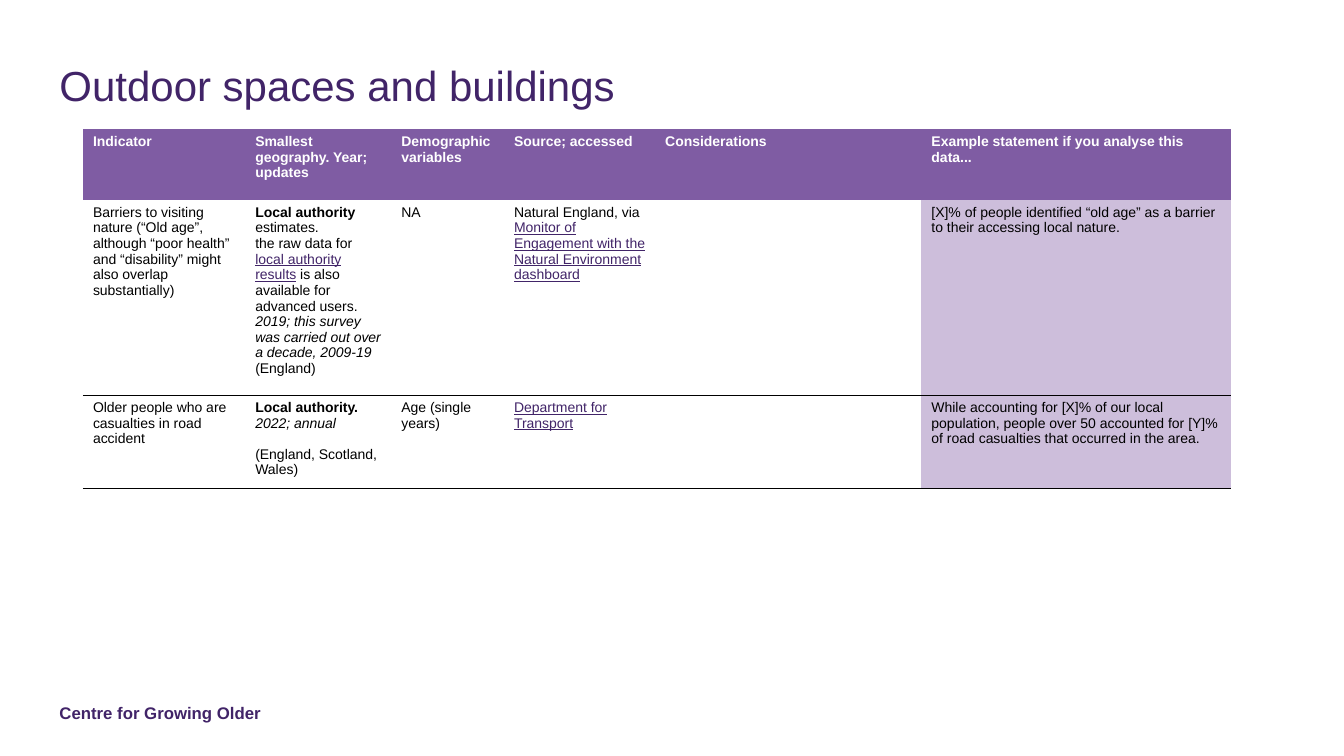
from lxml import etree
from pptx import Presentation
from pptx.dml.color import RGBColor
from pptx.enum.text import MSO_ANCHOR, PP_ALIGN
from pptx.oxml.ns import qn
from pptx.util import Cm, Pt

LEFT, TOP = PP_ALIGN.LEFT, MSO_ANCHOR.TOP
FONT = "Arial"
NO_GRID_STYLE = "{2D5ABB26-0587-4C30-8999-92F81FD0307C}"
COLOURS = {
    "brand": "412468",
    "header": "7F5CA3",
    "example": "CDBEDB",
    "white": "FFFFFF",
    "black": "000000",
}

TITLE = "Outdoor spaces and buildings"
FOOTER = "Centre for Growing Older"
HEADINGS = [
    "Indicator",
    "Smallest geography. Year; updates",
    "Demographic variables",
    "Source; accessed",
    "Considerations",
    "Example statement if you analyse this data...",
]
INDICATORS = [
    [
        [[("Barriers to visiting nature (“Old age”, although “poor health” and "
           "“disability” might also overlap substantially)", "plain")]],
        [
            [("Local authority", "bold"), (" estimates.", "plain")],
            [("the raw data for ", "plain"),
             ("local authority results", "link"),
             (" is also available for advanced users. ", "plain"),
             ("2019; this survey was carried out over a decade, 2009-19", "italic")],
            [("(England)", "plain")],
        ],
        [[("NA", "plain")]],
        [[("Natural England, via ", "plain"),
          ("Monitor of Engagement with the Natural Environment dashboard", "link")]],
        [],
        [[("[X]% of people identified “old age” as a barrier to their accessing "
           "local nature.", "plain")]],
    ],
    [
        [[("Older people who are casualties in road accident", "plain")]],
        [
            [("Local authority. ", "bold"), ("2022; annual", "italic")],
            [("(England, Scotland, Wales)", "spaced")],
        ],
        [[("Age (single years)", "plain")]],
        [[("Department for Transport", "link")]],
        [],
        [[("While accounting for [X]% of our local population, people over 50 "
           "accounted for [Y]% of road casualties that occurred in the area.", "plain")]],
    ],
]
COLUMN_WIDTHS = [4.09, 3.68, 2.84, 3.81, 6.71, 7.79]
ROW_HEIGHTS = [1.78, 4.6, 2.25]
EXAMPLE_COLUMN = len(HEADINGS) - 1


def add_run(paragraph, words, size, colour, bold=False, italic=False, underline=False):
    run = paragraph.add_run()
    run.text = words
    font = run.font
    font.name, font.size = FONT, Pt(size)
    font.bold, font.italic, font.underline = bold, italic, underline
    font.color.rgb = RGBColor.from_string(COLOURS[colour])


def add_label(slide, words, left, top, width, height, size, bold=False):
    frame = slide.shapes.add_textbox(Cm(left), Cm(top), Cm(width), Cm(height)).text_frame
    frame.word_wrap = True
    frame.vertical_anchor = TOP
    frame.margin_left = frame.margin_right = frame.margin_top = frame.margin_bottom = 0
    paragraph = frame.paragraphs[0]
    paragraph.alignment = LEFT
    add_run(paragraph, words, size, "brand", bold)
    return paragraph


def add_border(cell, side):
    line = etree.SubElement(cell._tc.get_or_add_tcPr(), qn(f"a:{side}"), w=str(Pt(0.25)))
    fill = etree.SubElement(line, qn("a:solidFill"))
    etree.SubElement(fill, qn("a:srgbClr"), val=COLOURS["black"])


def fill_cell(cell, colour):
    if colour:
        cell.fill.solid()
        cell.fill.fore_color.rgb = RGBColor.from_string(COLOURS[colour])
    else:
        cell.fill.background()


def write_cell(cell, paragraphs):
    frame = cell.text_frame
    for number, runs in enumerate(paragraphs):
        paragraph = frame.add_paragraph() if number else frame.paragraphs[0]
        paragraph.alignment = LEFT
        for words, style in runs:
            if style == "spaced":
                paragraph.space_before = Pt(11)
            colour = {"link": "brand", "heading": "white"}.get(style, "black")
            add_run(paragraph, words, 10, colour, style in ("bold", "heading"),
                    style == "italic", style == "link")


def add_indicator_table(slide):
    rows = [[[[(heading, "heading")]] for heading in HEADINGS]] + INDICATORS
    table = slide.shapes.add_table(
        len(rows), len(HEADINGS), Cm(2.09), Cm(3.25),
        Cm(sum(COLUMN_WIDTHS)), Cm(sum(ROW_HEIGHTS))).table
    table.horz_banding = False
    table._tbl.tblPr.find(qn("a:tableStyleId")).text = NO_GRID_STYLE
    for column, width in zip(table.columns, COLUMN_WIDTHS):
        column.width = Cm(width)
    for row, height in zip(table.rows, ROW_HEIGHTS):
        row.height = Cm(height)
    for r, row in enumerate(rows):
        for c, paragraphs in enumerate(row):
            cell = table.cell(r, c)
            cell.vertical_anchor = TOP
            write_cell(cell, paragraphs)
            if r > 1:
                add_border(cell, "lnT")
            if r > 0:
                add_border(cell, "lnB")
            body_fill = "example" if c == EXAMPLE_COLUMN else None
            fill_cell(cell, body_fill if r else "header")


def main():
    deck = Presentation()
    deck.slide_width, deck.slide_height = Cm(33.87), Cm(19.05)
    slide = deck.slides.add_slide(deck.slide_layouts[6])
    add_label(slide, FOOTER, 1.5, 17.7, 9.04, 0.51, 12, bold=True)
    title = add_label(slide, TITLE, 1.5, 1.5, 30.86, 2.87, 30)
    title.line_spacing = Pt(36)
    add_indicator_table(slide)
    deck.save("out.pptx")


if __name__ == "__main__":
    main()
